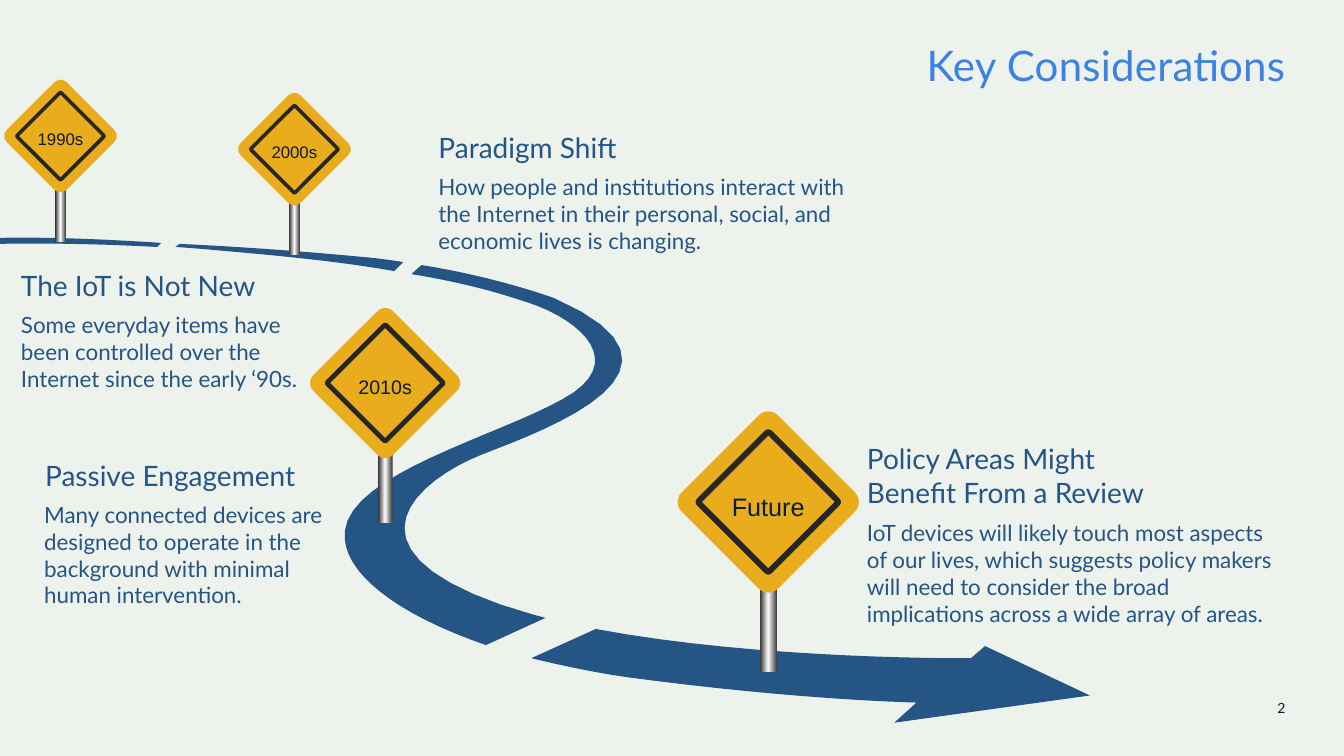
from pptx import Presentation
from pptx.dml.color import RGBColor
from pptx.enum.shapes import MSO_SHAPE
from pptx.enum.text import MSO_ANCHOR, MSO_AUTO_SIZE, PP_ALIGN
from pptx.oxml import parse_xml
from pptx.util import Pt

RECTANGLE = MSO_SHAPE.RECTANGLE
ROUNDED = MSO_SHAPE.ROUNDED_RECTANGLE
LEFT, CENTER, RIGHT = PP_ALIGN.LEFT, PP_ALIGN.CENTER, PP_ALIGN.RIGHT
TOP, MIDDLE = MSO_ANCHOR.TOP, MSO_ANCHOR.MIDDLE
NO_AUTOFIT = MSO_AUTO_SIZE.NONE

EMU_PER_PX = 9144
CURVE_STEPS = 16
NAMESPACE = "http://schemas.openxmlformats.org/drawingml/2006/main"
POST_STOPS = [(0, "262626"), (50, "FFFFFF"), (100, "404040")]

ROAD_PIECES = [
    [(497, 600), (334, 543, 415, 476, 478, 451), (542, 426, 710, 366, 550, 296),
     (550, 296, 494, 275, 418, 263), (408, 272), (463, 281, 496, 291, 526, 301),
     (576, 318, 624, 360, 558, 396), (492, 433, 348, 470, 342, 527),
     (338, 567, 392, 609, 482, 640), (541, 613), (525, 609, 511, 604, 497, 600)],
    [(0, 236), (0, 242), (0, 242, 61, 240, 156, 245), (160, 241),
     (100, 237, 42, 235, 0, 236)],
    [(360, 255), (308, 250, 243, 245, 178, 242), (174, 245),
     (203, 247, 234, 250, 267, 253), (318, 258, 358, 263, 391, 269), (400, 260),
     (387, 258, 373, 256, 360, 255)],
    [(1081, 690), (977, 641), (963, 653), (963, 653, 755, 655, 591, 624), (527, 653),
     (556, 660, 588, 667, 623, 672), (795, 695, 909, 697, 909, 697), (887, 717)],
]

SIGNS = [
    ("Future", 762, 498, 180, 18),
    ("2010s", 382, 380, 149, 14),
    ("2000s", 292, 148, 112, 12),
    ("1990s", 60, 135, 112, 12),
]

TOPICS = [
    ("Policy Areas Might\vBenefit From a Review", (850, 433, 388, 77),
     "IoT devices will likely touch most aspects of our lives, which suggests policy "
     "makers will need to consider the broad implications across a wide array of areas.",
     (850, 510, 426, 118)),
    ("Passive Engagement", (35, 450, 356, 44),
     "Many connected devices are designed to operate in the background with minimal "
     "human intervention.", (34, 492, 312, 118)),
    ("Paradigm Shift", (425, 125, 439, 44),
     "How people and institutions interact with the Internet in their personal, social, "
     "and economic lives is changing.", (425, 167, 435, 91)),
    ("The IoT is Not New", (11, 261, 337, 44),
     "Some everyday items have\vbeen controlled over the\vInternet since the early ‘90s.",
     (11, 304, 335, 91)),
]


def px(value):
    return round(value * EMU_PER_PX)


def color(hex_value):
    return RGBColor.from_string(hex_value)


def apply_format(target, values):
    for name, value in values.items():
        setattr(target, name, value)


def curve_points(start, curve):
    controls = [start, curve[:2], curve[2:4], curve[4:]]
    points = []
    for step in range(1, CURVE_STEPS + 1):
        t = step / CURVE_STEPS
        weights = [(1 - t) ** 3, 3 * t * (1 - t) ** 2, 3 * t * t * (1 - t), t ** 3]
        points.append(tuple(sum(weight * point[axis] for weight, point in zip(weights, controls))
                            for axis in (0, 1)))
    return points


class RoadSlide:
    background = "EEF2EC"
    blue = "245585"
    title_blue = "3A82E4"
    ink = "0C1C2C"
    yellow = "E9AC1C"
    black = "262626"

    def __init__(self, presentation):
        self.slide = presentation.slides.add_slide(presentation.slide_layouts[5])
        fill = self.slide.background.fill
        fill.solid()
        fill.fore_color.rgb = color(self.background)

    def set_text(self, shape, text, size, hex_value, font="Lato", align=LEFT, anchor=TOP,
                 inset=None):
        frame = shape.text_frame
        apply_format(frame, {"word_wrap": True, "auto_size": NO_AUTOFIT, "vertical_anchor": anchor})
        if inset is not None:
            for side in ("left", "top", "right", "bottom"):
                setattr(frame, f"margin_{side}", px(inset))
        paragraph = frame.paragraphs[0]
        paragraph.text = text
        paragraph.alignment = align
        for run in paragraph.runs:
            apply_format(run.font, {"name": font, "size": Pt(size), "bold": False})
            run.font.color.rgb = color(hex_value)
        return paragraph

    def title(self, text, box):
        shape = self.slide.shapes.title
        apply_format(shape, dict(zip(("left", "top", "width", "height"), map(px, box))))
        paragraph = self.set_text(shape, text, 30, self.title_blue, align=RIGHT, inset=0)
        paragraph.line_spacing = 1.06
        paragraph.runs[0].font._element.set("spc", "20")

    def text(self, text, box, size, hex_value, **options):
        shape = self.slide.shapes.add_textbox(*map(px, box))
        self.set_text(shape, text, size, hex_value, **options)

    def road(self, segments):
        points = [segments[0]]
        for segment in segments[1:]:
            points += [segment] if len(segment) == 2 else curve_points(points[-1], segment)
        outline = [(px(x), px(y)) for x, y in points]
        builder = self.slide.shapes.build_freeform(*outline[0])
        builder.add_line_segments(outline[1:], close=True)
        shape = builder.convert_to_shape()
        shape.shadow.inherit = False
        shape.fill.solid()
        shape.fill.fore_color.rgb = color(self.blue)
        shape.line.fill.background()

    def post(self, box):
        shape = self.slide.shapes.add_shape(RECTANGLE, *map(px, box))
        shape.shadow.inherit = False
        shape.line.fill.background()
        stops = "".join(f'<a:gs pos="{position * 1000}"><a:srgbClr val="{value}"/></a:gs>'
                        for position, value in POST_STOPS)
        gradient = parse_xml(f'<a:gradFill xmlns:a="{NAMESPACE}" rotWithShape="1">'
                             f'<a:gsLst>{stops}</a:gsLst><a:lin ang="0" scaled="0"/></a:gradFill>')
        shape._element.spPr.insert(2, gradient)

    def plate(self, center_x, center_y, side, roundness, fill=None, line=None, weight=0):
        box = (center_x - side / 2, center_y - side / 2, side, side)
        shape = self.slide.shapes.add_shape(ROUNDED, *map(px, box))
        shape.shadow.inherit = False
        shape.rotation = 45
        shape.adjustments[0] = roundness
        for target, value in ((shape.fill, fill), (shape.line.fill, line)):
            if value:
                target.solid()
                target.fore_color.rgb = color(value)
            else:
                target.background()
        if line:
            shape.line.width = px(weight)

    def sign(self, label, center_x, center_y, size, font_size):
        post_width = size * 0.095
        self.post((center_x - post_width / 2, center_y + size * 0.465, post_width, size * 0.47))
        self.plate(center_x, center_y, size * 0.75, 0.1, fill=self.yellow)
        self.plate(center_x, center_y, size * 0.55, 0.02, line=self.black, weight=size * 0.032)
        width, height = size * 0.87, font_size * 2.2
        label_top = center_y + size * 0.025 - height / 2
        self.text(label, (center_x - width / 2, label_top, width, height), font_size, self.ink,
                  font="Arial", align=CENTER, anchor=MIDDLE)


def main():
    presentation = Presentation()
    presentation.slide_width = px(1333)
    presentation.slide_height = px(750)
    page = RoadSlide(presentation)
    page.title("Key Considerations", (59, 36, 1216, 89))
    page.text("2", (975, 694, 300, 19), 10, page.ink, align=RIGHT, inset=0)
    for piece in ROAD_PIECES:
        page.road(piece)
    for heading, heading_box, body, body_box in TOPICS:
        page.text(body, body_box, 16, page.blue)
        page.text(heading, heading_box, 20, page.blue)
    for sign in SIGNS:
        page.sign(*sign)
    presentation.save("out.pptx")


if __name__ == "__main__":
    main()
